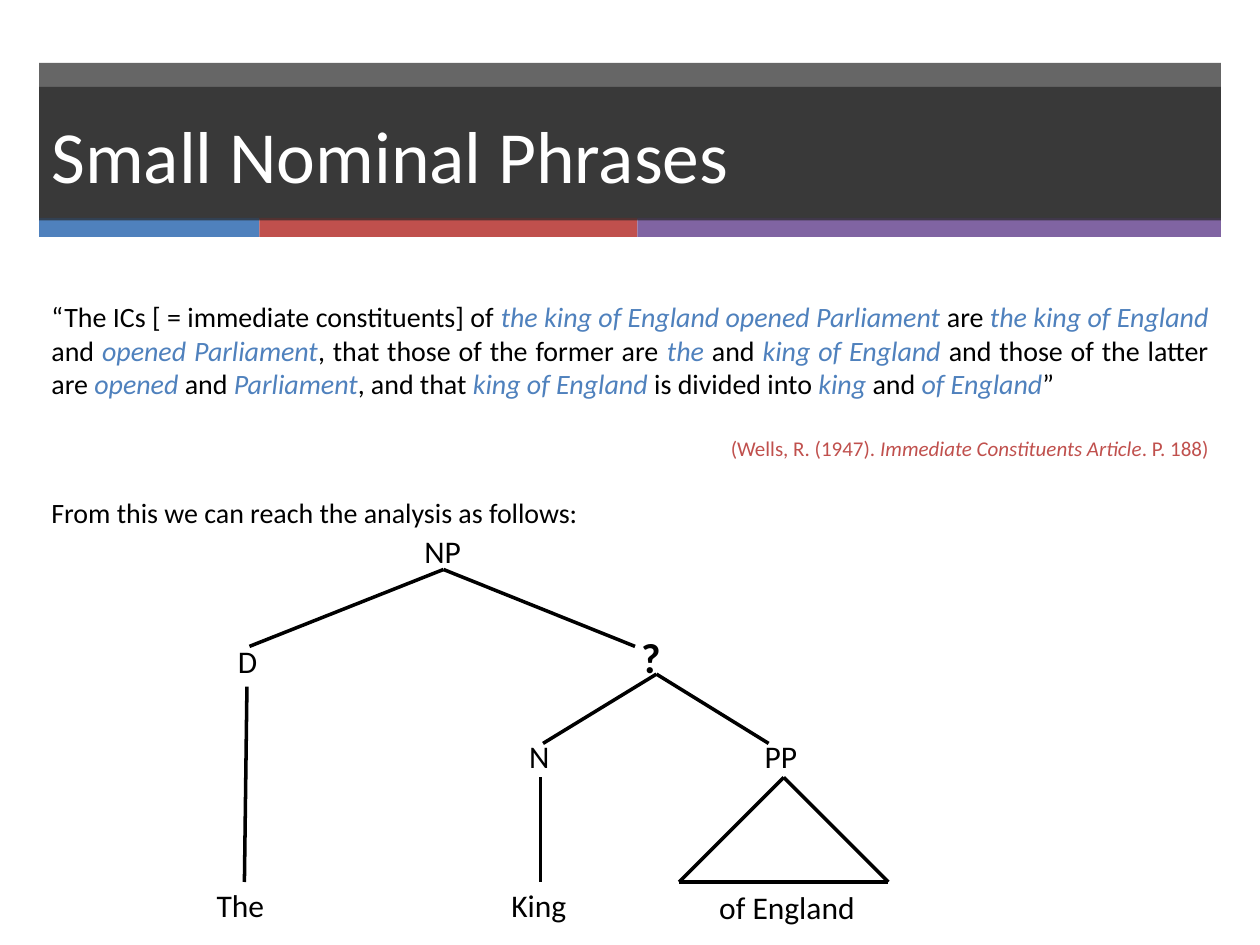
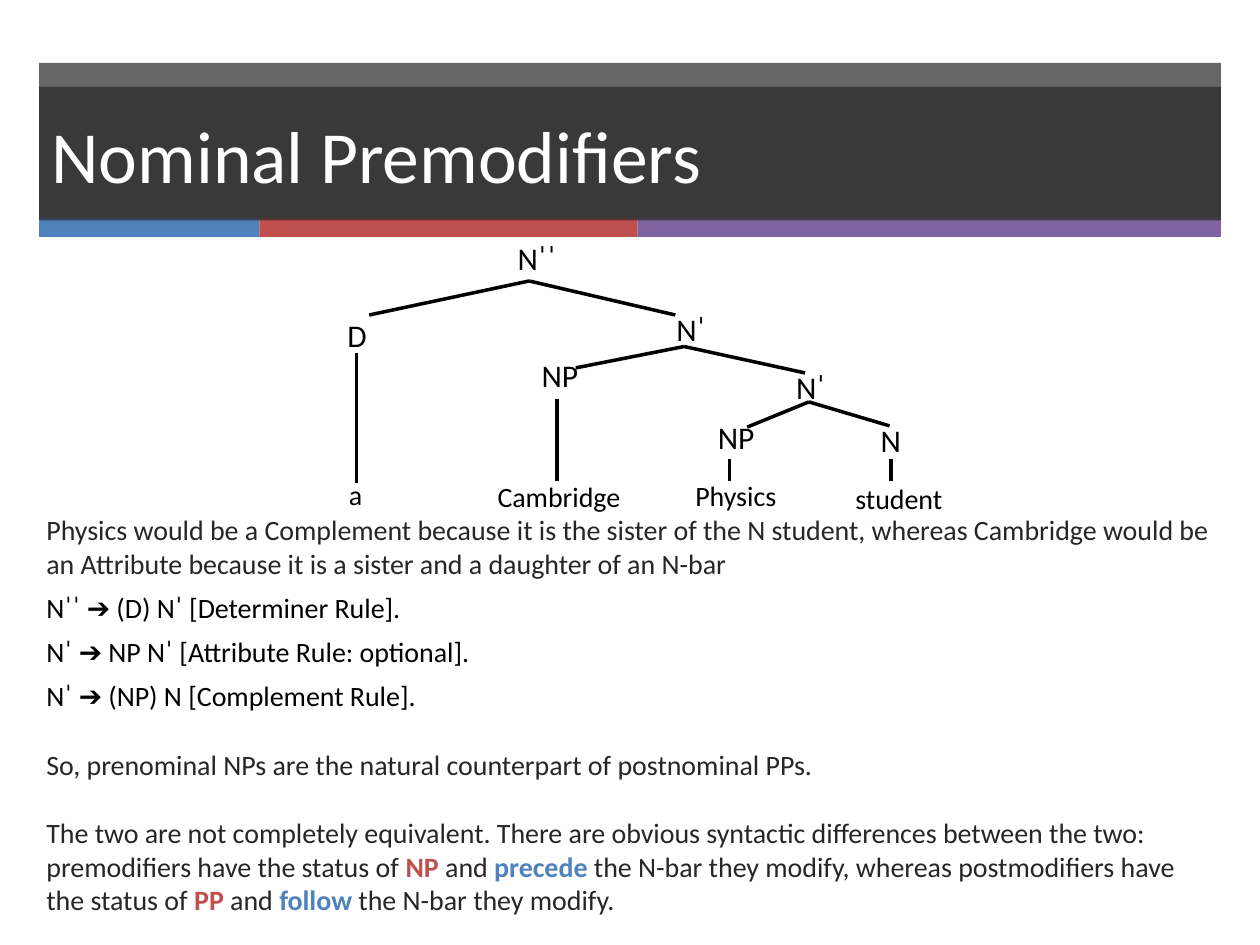
from pptx import Presentation
from pptx.dml.color import RGBColor
from pptx.enum.shapes import MSO_CONNECTOR as LINE, MSO_SHAPE as SHAPE
from pptx.enum.text import MSO_ANCHOR as ANCHOR, PP_ALIGN as ALIGN
from pptx.oxml.ns import qn
from pptx.util import Inches, Pt
from lxml import etree

BLACK = RGBColor(0x00, 0x00, 0x00)
WHITE = RGBColor(0xFF, 0xFF, 0xFF)
DARK = RGBColor(0x26, 0x26, 0x26)
BLUE = RGBColor(0x4F, 0x81, 0xBD)
RED = RGBColor(0xC0, 0x50, 0x4D)
PURPLE = RGBColor(0x80, 0x64, 0xA2)
FONT = "Calibri"

# left, top, width, height, colour, opacity in percent
BANDS = [
    (0.31, 0.5, 9.38, 1.24, DARK, 70),
    (0.31, 1.73, 1.75, 0.15, BLUE, 100),
    (2.06, 1.73, 3, 0.15, RED, 100),
    (5.06, 1.73, 4.63, 0.15, PURPLE, 100),
    (0.31, 0.69, 9.38, 1.06, DARK, 70),
]

# run styles
TITLE = {"size": Pt(42), "color": WHITE}
NODE = {"size": Pt(18), "color": BLACK}
MARK = {"size": Pt(24), "color": BLACK, "bold": True}
PLAIN = {"size": Pt(16), "color": BLACK}
TERM = {"size": Pt(16), "color": BLUE, "italic": True}
CITE = {"size": Pt(12), "color": RED}
WORK = {**CITE, "italic": True}
BODY = {"size": Pt(16), "color": DARK}
KIND = {"size": Pt(16), "color": RED, "bold": True}
VERB = {"size": Pt(16), "color": BLUE, "bold": True}

# In the quote, plain words and cited terms take turns
QUOTE = [
    "“The ICs [ = immediate constituents] of ",
    "the king of England opened Parliament ", "are ",
    "the king of England ", "and ",
    "opened Parliament", ", that those of the former are ",
    "the ", "and ",
    "king of England ", "and those of the latter are ",
    "opened ", "and ",
    "Parliament", ", and that ",
    "king of England ", "is divided into ",
    "king ", "and ",
    "of England", "”",
]

# body: align, space before, runs
# nodes: left, top, width, text, style
# lines: from x, from y, to x, to y
SLIDES = [
    {
        "title": "Small Nominal Phrases",
        "box": (0.31, 2.33, 9.38, 4.97),
        "body": [
            (ALIGN.JUSTIFY, 20,
             [(text, TERM if i % 2 else PLAIN) for i, text in enumerate(QUOTE)]),
            (ALIGN.RIGHT, 20, [
                ("(Wells, R. (1947). ", CITE),
                ("Immediate Constituents Article", WORK),
                (". P. 188)", CITE)]),
            (ALIGN.LEFT, 20,
             [("From this we can reach the analysis as follows:", PLAIN)]),
        ],
        "lines": [
            (3.52, 4.52, 1.98, 5.13), (3.52, 4.52, 5.04, 5.13),
            (5.21, 5.35, 4.31, 5.9), (5.21, 5.35, 6.1, 5.9),
            (6.22, 6.17, 5.39, 7), (6.22, 6.17, 7.05, 7), (5.39, 7, 7.05, 7),
            (4.29, 6.17, 4.29, 7), (1.96, 5.45, 1.94, 7),
        ],
        "nodes": [
            (3.27, 4.17, 0.65, "NP", NODE), (4.99, 4.96, 0.65, "?", MARK),
            (1.79, 5.05, 0.65, "D", NODE), (4.1, 5.8, 0.65, "N", NODE),
            (5.97, 5.8, 0.65, "PP", NODE), (1.62, 6.98, 0.65, "The", NODE),
            (3.96, 6.98, 0.65, "King", NODE), (5.61, 7, 2.31, "of England", NODE),
        ],
    },
    {
        "title": "Nominal Premodifiers",
        "box": (0.27, 4.02, 9.46, 4.37),
        "body": [
            (ALIGN.LEFT, 20, [(
                "Physics would be a Complement because it is the sister of the N "
                "student, whereas Cambridge would be an Attribute because it is a "
                "sister and a daughter of an N-bar", BODY)]),
            (ALIGN.LEFT, 6, [("Nˈˈ ➔ (D) Nˈ [Determiner Rule].", PLAIN)]),
            (ALIGN.LEFT, 6, [("Nˈ ➔ NP Nˈ [Attribute Rule: optional].", PLAIN)]),
            (ALIGN.LEFT, 6, [("Nˈ ➔ (NP) N [Complement Rule].", PLAIN)]),
            (ALIGN.LEFT, 20, [(
                "So, prenominal NPs are the natural counterpart of "
                "postnominal PPs.", BODY)]),
            (ALIGN.LEFT, 20, [
                ("The two are not completely equivalent. There are obvious "
                 "syntactic differences between the two: premodifiers have the "
                 "status of ", BODY),
                ("NP", KIND), (" and ", BODY), ("precede ", VERB),
                ("the N-bar they modify, whereas postmodifiers have the status "
                 "of ", BODY),
                ("PP", KIND), (" and ", BODY), ("follow", VERB),
                (" the N-bar they modify.", BODY)]),
        ],
        "lines": [
            (4.2, 2.23, 2.93, 2.5), (4.2, 2.23, 5.36, 2.5),
            (5.43, 2.75, 4.57, 2.92), (5.43, 2.75, 6.39, 2.96),
            (6.42, 3.19, 5.93, 3.39), (6.42, 3.19, 7.06, 3.38),
            (2.83, 2.8, 2.83, 3.83), (4.42, 3.17, 4.42, 3.82),
            (5.79, 3.64, 5.79, 3.82), (7.07, 3.64, 7.07, 3.82),
        ],
        "nodes": [
            (4.01, 1.85, 0.65, "Nˈˈ", NODE), (2.66, 2.46, 1.53, "D", NODE),
            (5.27, 2.41, 0.65, "Nˈ", NODE), (4.2, 2.78, 0.63, "NP", NODE),
            (6.22, 2.87, 1.43, "Nˈ", NODE), (5.6, 3.27, 0.63, "NP", NODE),
            (6.89, 3.29, 0.63, "N", NODE), (2.67, 3.74, 0.63, "a", PLAIN),
            (3.85, 3.76, 1.62, "Cambridge", PLAIN),
            (5.42, 3.75, 1.27, "Physics", PLAIN),
            (6.69, 3.77, 1.09, "student", PLAIN),
        ],
    },
]


def write(par, runs, align=ALIGN.LEFT, before=0):
    """Fill a paragraph with (text, style) runs."""
    par.alignment = align
    par.space_before = Pt(before)
    for text, style in runs:
        run = par.add_run()
        run.text = text
        run.font.name = FONT
        for key, value in style.items():
            if key == "color":
                run.font.color.rgb = value
            else:
                setattr(run.font, key, value)


def add_text(slide, box):
    """Add a wrapping text box and return its frame."""
    frame = slide.shapes.add_textbox(*map(Inches, box)).text_frame
    frame.word_wrap = True
    return frame


deck = Presentation()
deck.slide_width, deck.slide_height = Inches(10), Inches(7.5)

for data in SLIDES:
    slide = deck.slides.add_slide(deck.slide_layouts[6])

    for *box, color, alpha in BANDS:
        band = slide.shapes.add_shape(SHAPE.RECTANGLE, *map(Inches, box))
        band.shadow.inherit = False
        band.fill.solid()
        band.fill.fore_color.rgb = color
        band.line.fill.background()
        if alpha < 100:
            tint = band.fill._xPr.find(".//" + qn("a:srgbClr"))
            etree.SubElement(tint, qn("a:alpha"), val=str(alpha * 1000))

    # The last band carries the title
    band.text_frame.vertical_anchor = ANCHOR.MIDDLE
    write(band.text_frame.paragraphs[0], [(data["title"], TITLE)])

    frame = add_text(slide, data["box"])
    for i, (align, before, runs) in enumerate(data["body"]):
        par = frame.add_paragraph() if i else frame.paragraphs[0]
        write(par, runs, align, before)

    for ends in data["lines"]:
        branch = slide.shapes.add_connector(LINE.STRAIGHT, *map(Inches, ends))
        branch.line.color.rgb = BLACK
        branch.line.width = Pt(2)
        etree.SubElement(branch._element.spPr, qn("a:effectLst"))

    for left, top, width, text, style in data["nodes"]:
        frame = add_text(slide, (left, top, width, 0.4))
        write(frame.paragraphs[0], [(text, style)])

deck.save("out.pptx")
